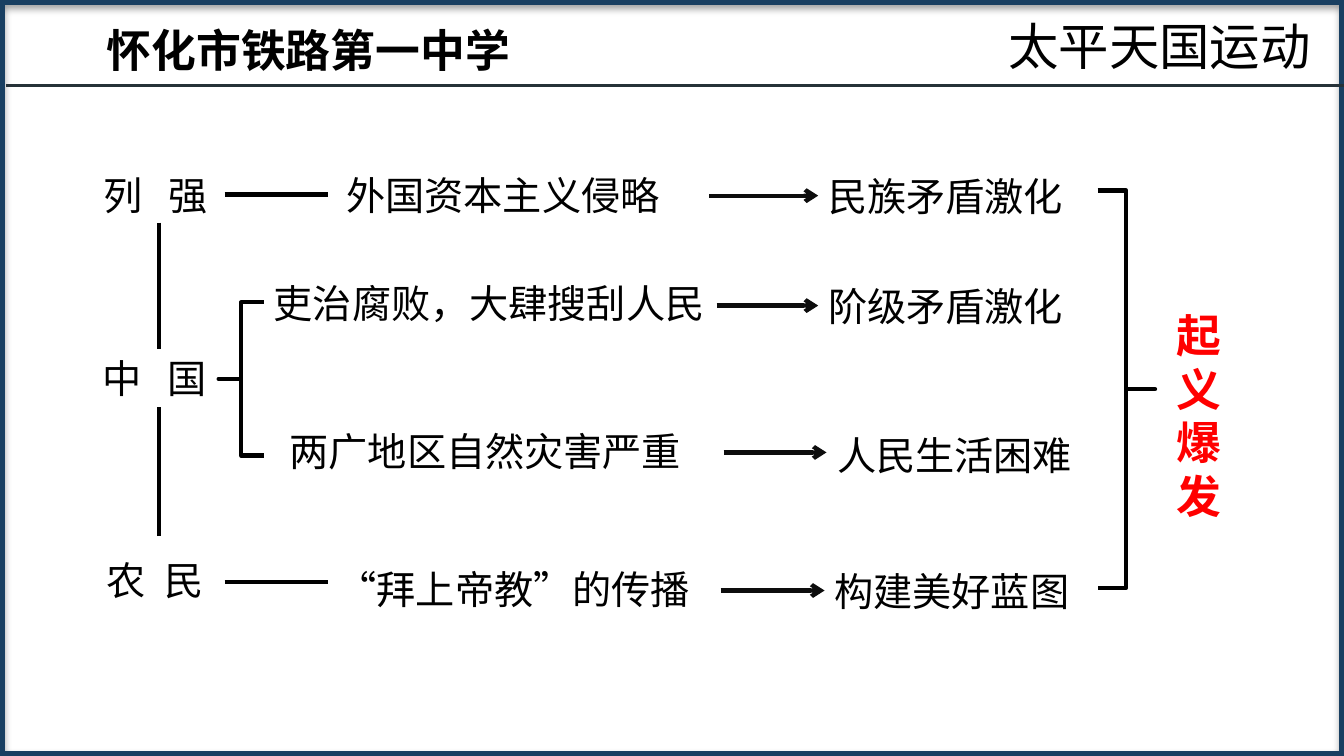
"""Build a slide that diagrams the causes of the Taiping uprising."""
from dataclasses import dataclass
from typing import Optional

from lxml import etree
from pptx import Presentation
from pptx.dml.color import RGBColor
from pptx.enum.shapes import MSO_CONNECTOR, MSO_SHAPE
from pptx.enum.text import MSO_ANCHOR, MSO_AUTO_SIZE, PP_ALIGN
from pptx.oxml.ns import qn
from pptx.util import Cm, Pt

STRAIGHT = MSO_CONNECTOR.STRAIGHT
RECTANGLE = MSO_SHAPE.RECTANGLE
LEFT_BRACE, RIGHT_BRACE = MSO_SHAPE.LEFT_BRACE, MSO_SHAPE.RIGHT_BRACE
MIDDLE, NO_AUTOFIT = MSO_ANCHOR.MIDDLE, MSO_AUTO_SIZE.NONE
LEFT, CENTER = PP_ALIGN.LEFT, PP_ALIGN.CENTER
TOP_SIDE, LEFT_SIDE, BOTTOM_SIDE = 0, 1, 2

COLORS = {"frame": "193F61", "rule": "263238", "ink": "000000",
          "arrow": "0D0D0D", "result": "FF0000"}
LATIN, CHINESE = "Arial", "Noto Sans CJK JP"
WIDTH, HEIGHT = 33.87, 19.05
INSET = 0.25


@dataclass
class Label:
    """A piece of text and its place in centimetres."""
    text: str
    left: float
    top: float
    width: float
    height: float = 1.46
    size: int = 28
    face: str = LATIN
    color: str = "ink"
    bold: bool = False
    align: PP_ALIGN = LEFT
    indent: float = 0
    tab: float = 0


@dataclass
class Link:
    """A straight line, optionally joined to the label where it ends."""
    start: tuple[float, float]
    end: tuple[float, float]
    color: str = "ink"
    weight: float = 3
    arrow: bool = False
    target: Optional[str] = None
    side: int = LEFT_SIDE


@dataclass
class Outline:
    """An unfilled preset shape."""
    kind: MSO_SHAPE
    left: float
    top: float
    width: float
    height: float
    color: str = "ink"
    weight: float = 3


TITLE = Label("太平天国运动", 24.6, 0.23, 9.24, 1.8, 36, CHINESE, align=CENTER)
LABELS = [
    Label("怀化市铁路第一中学", 2.44, 0.43, 10.85, 1.63, 32, CHINESE, bold=True),
    Label("列\t强", 2.36, 4.17, 3.99, tab=1.64),
    Label("中\t国", 2.34, 8.8, 3.32, tab=1.64),
    Label("农\t民", 2.44, 13.87, 3.66, tab=1.45),
    Label("外国资本主义侵略", 8.26, 4.17, 10.9, indent=0.22),
    Label("吏治腐败，大肆搜刮人民", 6.65, 6.91, 11.51),
    Label("两广地区自然灾害严重", 6.83, 10.64, 12.29, indent=0.22),
    Label("“拜上帝教”的传播", 8.26, 14.1, 10),
    Label("民族矛盾激化", 20.62, 4.2, 7.7),
    Label("阶级矛盾激化", 20.62, 6.97, 6.6),
    Label("人民生活困难", 20.85, 10.74, 7.39),
    Label("构建美好蓝图", 20.78, 14.15, 6.96),
    Label("起义爆发", 29.41, 7.59, 1.8, 5.74, 32, color="result", bold=True),
]
LINKS = [
    Link((0.15, 2.16), (WIDTH, 2.16), "rule", 2.25),
    Link((5.66, 4.9), (8.26, 4.9), target="外国资本主义侵略"),
    Link((5.66, 14.66), (8.26, 14.66)),
    Link((4, 5.61), (4, 8.8), target="中\t国", side=TOP_SIDE),
    Link((4, 13.51), (4, 10.26), target="中\t国", side=BOTTOM_SIDE),
    Link((17.88, 4.93), (20.62, 4.93), "arrow", arrow=True, target="民族矛盾激化"),
    Link((18.06, 7.7), (20.62, 7.7), "arrow", arrow=True, target="阶级矛盾激化"),
    Link((18.24, 11.4), (20.83, 11.4), "arrow", arrow=True),
    Link((18.16, 14.88), (20.78, 14.88), "arrow", arrow=True, target="构建美好蓝图"),
]
FRAME = Outline(RECTANGLE, 0, 0, WIDTH, HEIGHT, "frame", 7)
BRACES = [Outline(LEFT_BRACE, 5.51, 7.62, 1.14, 3.86),
          Outline(RIGHT_BRACE, 27.66, 4.8, 1.45, 10.01)]


def rgb(name: str) -> RGBColor:
    """Return a named colour."""
    return RGBColor.from_string(COLORS[name])


def apply(thing, formats: dict) -> None:
    """Set each attribute to its format value."""
    for name, value in formats.items():
        setattr(thing, name, value)


def write_label(box, label: Label) -> None:
    """Place a box and fill it with formatted text."""
    apply(box, {"left": Cm(label.left), "top": Cm(label.top),
                "width": Cm(label.width), "height": Cm(label.height)})
    frame = box.text_frame
    apply(frame, {"word_wrap": True, "auto_size": NO_AUTOFIT,
                  "vertical_anchor": MIDDLE,
                  "margin_left": Cm(INSET + label.indent)})
    para = frame.paragraphs[0]
    para.alignment = label.align
    if label.tab:
        tabs = etree.SubElement(para._p.get_or_add_pPr(), qn("a:tabLst"))
        etree.SubElement(tabs, qn("a:tab"), pos=str(Cm(label.tab)), algn="l")
    span = para.add_run()
    span.text = label.text
    span.font.color.rgb = rgb(label.color)
    apply(span.font, {"size": Pt(label.size), "bold": label.bold, "name": label.face})
    properties = span._r.get_or_add_rPr()
    properties.set("lang", "zh-CN")
    etree.SubElement(properties, qn("a:ea"), typeface=CHINESE)


def draw_outline(page, outline: Outline):
    """Draw an unfilled shape and return it."""
    shape = page.shapes.add_shape(outline.kind, Cm(outline.left), Cm(outline.top),
                                  Cm(outline.width), Cm(outline.height))
    shape.fill.background()
    shape.line.color.rgb = rgb(outline.color)
    shape.line.width = Pt(outline.weight)
    shape.shadow.inherit = False
    return shape


def cast_shadow(shape) -> None:
    """Give a shape a soft downward shadow."""
    effects = shape.element.spPr.find(qn("a:effectLst"))
    shadow = etree.SubElement(effects, qn("a:outerShdw"), blurRad=str(Pt(5.2)),
                              dist=str(Pt(3)), dir="5400000", rotWithShape="0")
    color = etree.SubElement(shadow, qn("a:srgbClr"), val=COLORS["ink"])
    etree.SubElement(color, qn("a:alpha"), val="40000")


def draw_link(page, link: Link, boxes: dict) -> None:
    """Draw a line and join its end to its target."""
    line = page.shapes.add_connector(STRAIGHT, *map(Cm, link.start + link.end))
    line.line.color.rgb = rgb(link.color)
    line.line.width = Pt(link.weight)
    properties = line.element.spPr
    if link.arrow:
        etree.SubElement(properties.find(qn("a:ln")), qn("a:tailEnd"), type="arrow")
    etree.SubElement(properties, qn("a:effectLst"))
    if link.target:
        line.end_connect(boxes[link.target], link.side)


def main() -> None:
    """Build and save the deck."""
    deck = Presentation()
    apply(deck, {"slide_width": Cm(WIDTH), "slide_height": Cm(HEIGHT)})
    page = deck.slides.add_slide(deck.slide_layouts[5])
    cast_shadow(draw_outline(page, FRAME))
    write_label(page.shapes.title, TITLE)
    boxes = {}
    for label in LABELS:
        boxes[label.text] = page.shapes.add_textbox(0, 0, 0, 0)
        write_label(boxes[label.text], label)
    for link in LINKS:
        draw_link(page, link, boxes)
    for brace in BRACES:
        draw_outline(page, brace).adjustments[0] = 0
    deck.save("out.pptx")


if __name__ == "__main__":
    main()
